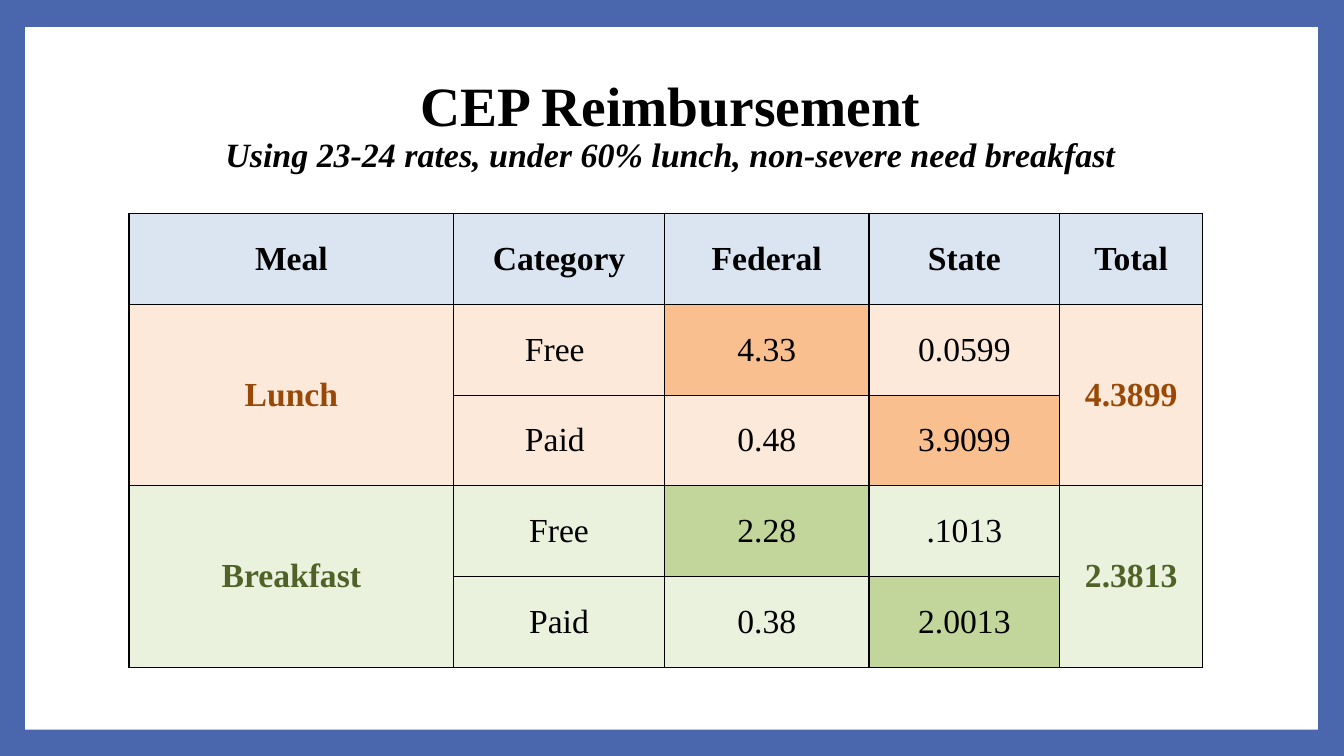
from lxml import etree
from pptx import Presentation
from pptx import util as u
from pptx.dml.color import RGBColor
from pptx.enum import shapes, text
from pptx.oxml.ns import qn

BLACK = "000000"
HEADINGS = ["Meal", "Category", "Federal", "State", "Total"]
COLUMN_WIDTHS = [3.22, 2.09, 2.03, 1.89, 1.42]
ROW_HEIGHT = 0.9
MEALS = [
    {"name": "Lunch", "total": "4.3899", "ink": "984807", "pale": "FDE9D9", "strong": "FABF8F",
     "rates": [("Free ", "4.33", "0.0599"), ("Paid ", "0.48", "3.9099")]},
    {"name": "Breakfast", "total": "2.3813", "ink": "4F6228", "pale": "EAF1DD", "strong": "C2D69B",
     "rates": [("Free", "2.28", ".1013"), ("Paid", "0.38", "2.0013")]},
]


def color(value):
    return RGBColor.from_string(value)


class SlideBuilder:
    font = "Times New Roman"

    def __init__(self, page):
        self.page = page

    def background(self, fill):
        self.page.background.fill.solid()
        self.page.background.fill.fore_color.rgb = color(fill)

    def panel(self, left, top, width, height, fill):
        box = self.page.shapes.add_shape(
            shapes.MSO_SHAPE.RECTANGLE, *map(u.Inches, (left, top, width, height)))
        box.shadow.inherit = False
        box.fill.solid()
        box.fill.fore_color.rgb = color(fill)
        box.line.fill.background()

    def style(self, para, size, ink=BLACK, bold=True, italic=False):
        para.alignment = text.PP_ALIGN.CENTER
        for span in para.runs:
            span.font.name = self.font
            span.font.size = u.Pt(size)
            span.font.bold = bold
            span.font.italic = italic
            span.font.color.rgb = color(ink)

    def heading(self, left, top, width, height, title, subtitle):
        box = self.page.shapes.add_textbox(*map(u.Inches, (left, top, width, height)))
        frame = box.text_frame
        frame.word_wrap = True
        frame.margin_top = u.Inches(0.11)
        frame.text = f"{title}\n{subtitle}"
        for para, size, italic in zip(frame.paragraphs, (39.6, 24.3), (False, True)):
            para.line_spacing = 0.9
            self.style(para, size, italic=italic)

    def table(self, left, top, widths, row_count, row_height):
        frame = self.page.shapes.add_table(
            row_count, len(widths), u.Inches(left), u.Inches(top),
            u.Inches(sum(widths)), u.Inches(row_count * row_height))
        table = frame.table
        for column, width in zip(table.columns, widths):
            column.width = u.Inches(width)
        for row in table.rows:
            row.height = u.Inches(row_height)
        for cell in table.iter_cells():
            self.borders(cell)
        return table

    def borders(self, cell):
        properties = cell._tc.get_or_add_tcPr()
        for side in ("a:lnL", "a:lnR", "a:lnT", "a:lnB"):
            line = etree.SubElement(properties, qn(side), w=str(u.Pt(1)))
            fill = etree.SubElement(line, qn("a:solidFill"))
            etree.SubElement(fill, qn("a:srgbClr"), val=BLACK)

    def cell(self, cell, words, fill, ink=BLACK, bold=True):
        cell.fill.solid()
        cell.fill.fore_color.rgb = color(fill)
        cell.vertical_anchor = text.MSO_ANCHOR.MIDDLE
        cell.margin_left = cell.margin_right = u.Inches(0.07)
        cell.margin_top = cell.margin_bottom = 0
        cell.text_frame.text = words
        self.style(cell.text_frame.paragraphs[0], 24, ink, bold)


def main():
    deck = Presentation()
    deck.slide_width, deck.slide_height = u.Inches(13.33), u.Inches(7.5)
    builder = SlideBuilder(deck.slides.add_slide(deck.slide_layouts[6]))
    builder.background("4A66AC")
    builder.panel(0.25, 0.27, 12.82, 6.97, "FFFFFF")
    builder.heading(1.25, 0.67, 10.8, 1.4, "CEP Reimbursement",
                    "Using 23-24 rates, under 60% lunch, non-severe need breakfast")

    table = builder.table(1.28, 2.12, COLUMN_WIDTHS, 5, ROW_HEIGHT)
    for column, words in enumerate(HEADINGS):
        builder.cell(table.cell(0, column), words, "DBE5F1")
    for index, meal in enumerate(MEALS):
        first = 1 + 2 * index
        for column, words in ((0, meal["name"]), (4, meal["total"])):
            table.cell(first, column).merge(table.cell(first + 1, column))
            builder.cell(table.cell(first, column), words, meal["pale"], meal["ink"])
        for offset, rates in enumerate(meal["rates"]):
            for column, words in enumerate(rates, start=1):
                fill = meal["strong"] if column == offset + 2 else meal["pale"]
                builder.cell(table.cell(first + offset, column), words, fill, bold=False)

    deck.save("out.pptx")


if __name__ == "__main__":
    main()
